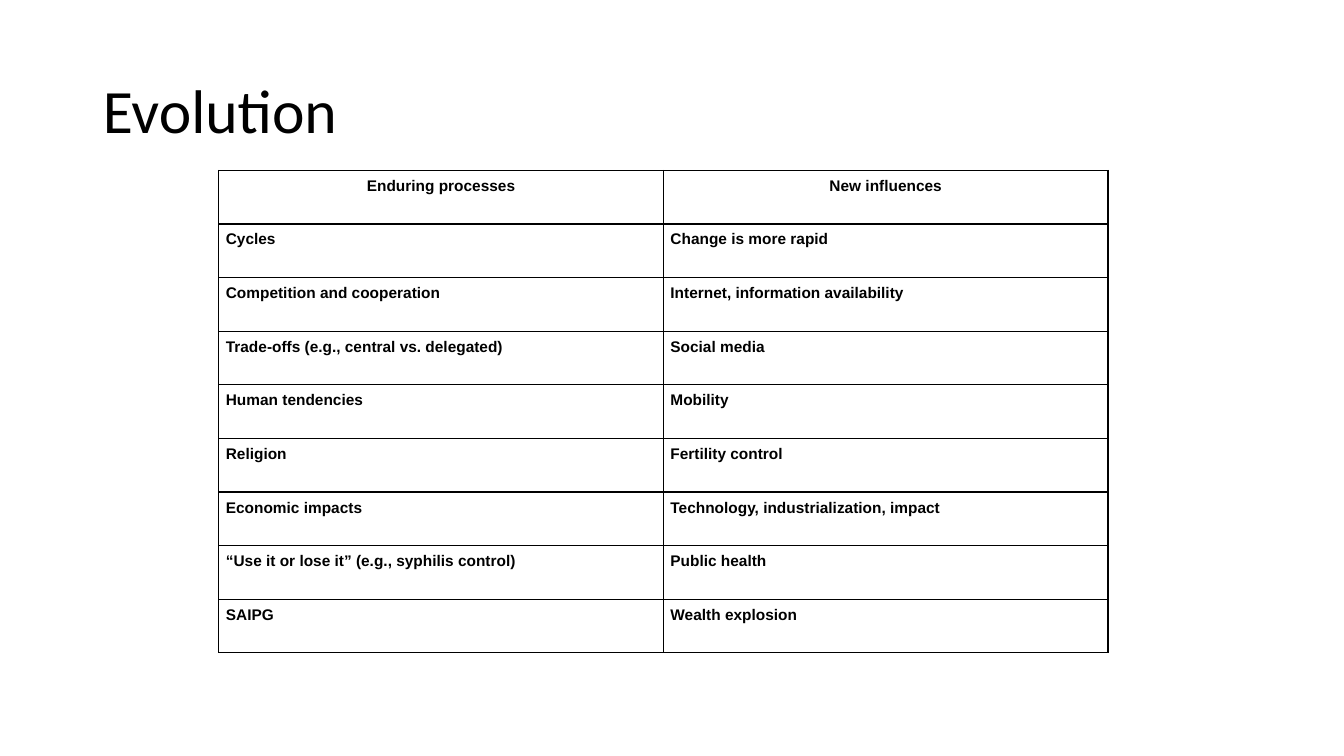
"""Build the Evolution slide with its two-column table of processes and influences."""
from dataclasses import dataclass

from lxml.etree import SubElement
from pptx import Presentation
from pptx.dml.color import RGBColor
from pptx.enum.text import MSO_ANCHOR, MSO_AUTO_SIZE, PP_ALIGN
from pptx.oxml import parse_xml
from pptx.oxml.ns import nsdecls, qn
from pptx.util import Inches, Pt


@dataclass(frozen=True)
class Theme:
    ink: str = "000000"
    paper: str = "FFFFFF"
    title_font: str = "Calibri"
    body_font: str = "Arial"
    title_size: float = 44
    body_size: float = 11
    border: float = 1
    inset: float = 0.07


ROWS = [
    ("Enduring processes", "New influences"),
    ("Cycles", "Change is more rapid"),
    ("Competition and cooperation", "Internet, information availability"),
    ("Trade-offs (e.g., central vs. delegated)", "Social media"),
    ("Human tendencies", "Mobility"),
    ("Religion", "Fertility control"),
    ("Economic impacts", "Technology, industrialization, impact"),
    ("“Use it or lose it” (e.g., syphilis control)", "Public health"),
    ("SAIPG", "Wealth explosion"),
]


def write(tf, text, *, font, size, color, bold=False, align=PP_ALIGN.LEFT, spacing=None):
    p = tf.paragraphs[0]
    p.alignment = align
    if spacing:
        p.line_spacing = spacing
    r = p.add_run()
    r.text = text
    r.font.name = font
    r.font.size = Pt(size)
    r.font.bold = bold
    r.font.color.rgb = RGBColor.from_string(color)


class SlideBuilder:
    def __init__(self, prs, theme):
        self.theme = theme
        self.s = prs.slides.add_slide(prs.slide_layouts[5])
        fill = self.s.background.fill
        fill.solid()
        fill.fore_color.rgb = RGBColor.from_string(theme.paper)

    def title(self, text, left, top, width, height):
        sp = self.s.shapes.title
        sp.left, sp.top = Inches(left), Inches(top)
        sp.width, sp.height = Inches(width), Inches(height)
        tf = sp.text_frame
        tf.word_wrap = True
        tf.auto_size = MSO_AUTO_SIZE.NONE
        tf.vertical_anchor = MSO_ANCHOR.MIDDLE
        write(tf, text, font=self.theme.title_font, size=self.theme.title_size,
              color=self.theme.ink, spacing=0.9)

    def table(self, rows, left, top, width, height):
        frame = self.s.shapes.add_table(len(rows), len(rows[0]), Inches(left), Inches(top),
                                        Inches(width), Inches(height))
        table = frame.table
        table.horz_banding = False
        for i, row in enumerate(rows):
            align = PP_ALIGN.LEFT if i else PP_ALIGN.CENTER
            for j, text in enumerate(row):
                self.cell(table.cell(i, j), text, align)

    def cell(self, cell, text, align):
        inset = Inches(self.theme.inset)
        cell.margin_left = cell.margin_right = inset
        cell.margin_top = cell.margin_bottom = inset
        cell.vertical_anchor = MSO_ANCHOR.TOP
        cell.fill.background()
        self.borders(cell)
        write(cell.text_frame, text, font=self.theme.body_font, size=self.theme.body_size,
              color=self.theme.ink, bold=True, align=align)

    def borders(self, cell):
        props = cell._tc.get_or_add_tcPr()
        for i, side in enumerate(("lnL", "lnR", "lnT", "lnB")):
            ln = parse_xml(f'<a:{side} {nsdecls("a")} w="{Pt(self.theme.border)}"/>')
            fill = SubElement(ln, qn("a:solidFill"))
            SubElement(fill, qn("a:srgbClr"), val=self.theme.ink)
            props.insert(i, ln)


def main():
    prs = Presentation()
    prs.slide_width, prs.slide_height = Inches(13.33), Inches(7.5)
    slide = SlideBuilder(prs, Theme())
    slide.title("Evolution", 0.92, 0.4, 11.5, 1.45)
    slide.table(ROWS, 2.17, 1.69, 8.82, 4.79)
    prs.save("out.pptx")


if __name__ == "__main__":
    main()
